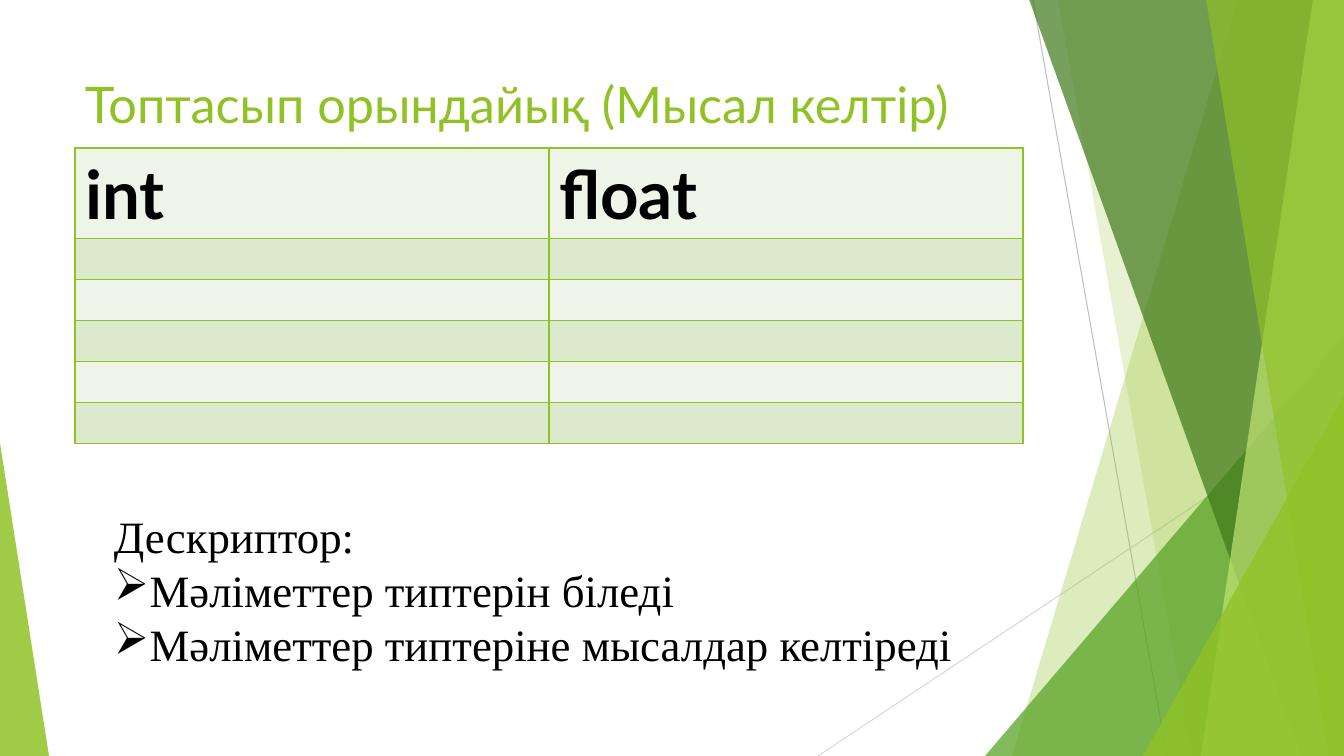
"""Build the int and float grouping task slide with its green facet frame."""
from lxml import etree
from pptx import Presentation, util as u
from pptx.dml.color import RGBColor
from pptx.enum import shapes, text
from pptx.oxml import parse_xml
from pptx.oxml.ns import qn, nsdecls

PX = 914400 / 100.8
WIDE, HIGH = 1344, 756
LIME = "90C226"


def px(*sizes):
    return [u.Emu(round(size * PX)) for size in sizes]


def rgb(code):
    return RGBColor.from_string(code)


deck = Presentation()
deck.slide_width, deck.slide_height = px(WIDE, HIGH)
slide = deck.slides.add_slide(deck.slide_layouts[6])
items = slide.shapes

for ends, color in [((1033, 0, 1167, HIGH), "BFBFBF"), ((WIDE, 406, 818, HIGH), "D9D9D9")]:
    line = items.add_connector(shapes.MSO_CONNECTOR.STRAIGHT, *px(*ends))
    line.line.color.rgb = rgb(color)
    line.line.width = u.Pt(0.75)
    etree.SubElement(line._element.spPr, qn("a:effectLst"))

# facets: (top x, bottom x) against the right edge, or (left, top, width, tip)
facets = [
    ((1238, 1012), LIME, 30),
    ((1058, 1192), LIME, 20),
    ((985, 336, 359, 1), "54A021", 72),
    ((1029, 1301), "3F7819", 70),
    ((1313, 1201), "C0E474", 70),
    ((1206, 1329), LIME, 65),
    ((1143, 396, 201, 1), LIME, 80),
    ((0, 443, 49, 0), LIME, 85),
]
for form, color, alpha in facets:
    if len(form) == 2:
        top, base = form
        pen = items.build_freeform(top, -1, scale=PX)
        pen.add_line_segments([(WIDE, -1), (WIDE, HIGH), (base, HIGH)], close=True)
        facet = pen.convert_to_shape()
    else:
        left, top, width, tip = form
        box = px(left, top, width, HIGH - top)
        facet = items.add_shape(shapes.MSO_SHAPE.ISOSCELES_TRIANGLE, *box)
        facet.adjustments[0] = tip
    facet.shadow.inherit = False
    facet.line.fill.background()
    facet.fill.solid()
    facet.fill.fore_color.rgb = rgb(color)
    tint = facet._element.spPr.find(qn("a:solidFill"))[0]
    etree.SubElement(tint, qn("a:alpha"), val=str(alpha * 1000))

title = items.add_textbox(*px(75, 68, 948, 145)).text_frame
title.word_wrap = True
title.text = "Топтасып орындайық (Мысал келтір)"
font = title.paragraphs[0].font
font.name, font.size, font.color.rgb = "Lato", u.Pt(36), rgb(LIME)

heads = ["int", "float"]
table = items.add_table(6, 2, *px(75, 148, 948, 295)).table
for col in table.columns:
    col.width = px(474)[0]
for i, row in enumerate(table.rows):
    row.height = px(41 if i else 90)[0]
    for j, cell in enumerate(row.cells):
        props = cell._tc.get_or_add_tcPr()
        for side in "LRTB":
            props.append(parse_xml(
                f'<a:ln{side} {nsdecls("a")} w="12700"><a:solidFill>'
                f'<a:srgbClr val="{LIME}"/></a:solidFill></a:ln{side}>'))
        cell.fill.solid()
        cell.fill.fore_color.rgb = rgb("DBE9CD" if i % 2 else "EEF4E8")
        if i == 0:
            cell.text = heads[j]
            font = cell.text_frame.paragraphs[0].font
            font.name, font.size, font.bold = "Lato", u.Pt(48), True
            font.color.rgb = rgb("000000")

goals = items.add_textbox(*px(104, 504, 875, 173)).text_frame
goals.word_wrap = True
goals.auto_size = text.MSO_AUTO_SIZE.SHAPE_TO_FIT_TEXT
goals.text = "Дескриптор:\nМәліметтер типтерін біледі\nМәліметтер типтеріне мысалдар келтіреді"
for i, para in enumerate(goals.paragraphs):
    if i:
        props = para._p.get_or_add_pPr()
        dent = px(31)[0]
        props.set("marL", str(dent))
        props.set("indent", str(-dent))
        etree.SubElement(props, qn("a:buChar"), char="➢")
    font = para.font
    font.name, font.size, font.color.rgb = "Times New Roman", u.Pt(32), rgb("000000")

deck.save("out.pptx")
